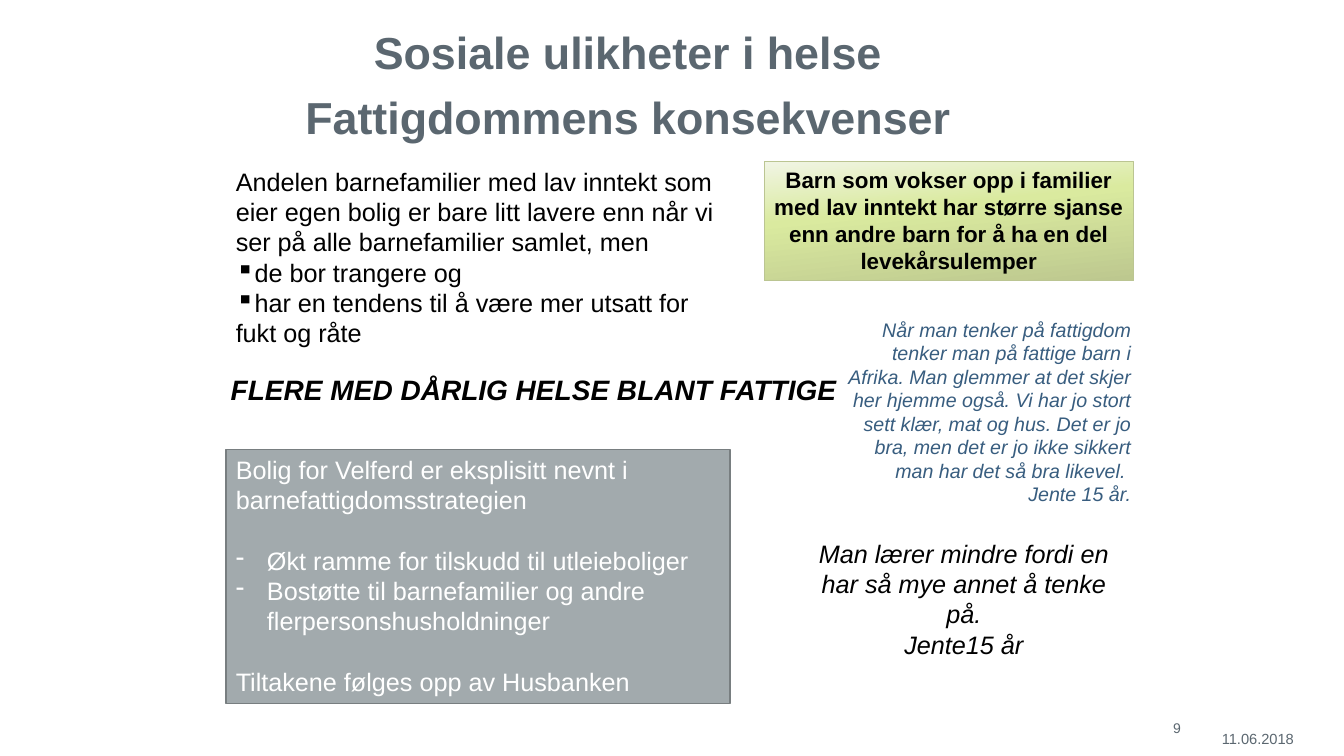
import copy
import pptx
import pptx.util
import pptx.dml.color
import pptx.enum.shapes
import pptx.enum.text
import pptx.oxml
import pptx.oxml.ns

PX = 9144
ALIGN = pptx.enum.text.PP_ALIGN
ANCHOR = pptx.enum.text.MSO_ANCHOR


def color(value):
    return pptx.dml.color.RGBColor.from_string(value)


def px(*lengths):
    return [pptx.util.Emu(length * PX) for length in lengths]


def add_bullet(paragraph, mark, indent):
    properties = paragraph._p.get_or_add_pPr()
    properties.set("marL", str(indent * PX))
    properties.set("indent", str(-indent * PX))
    bullet = pptx.oxml.parse_xml(
        f'<a:buChar {pptx.oxml.ns.nsdecls("a")} char="{mark}"/>')
    properties.append(bullet)


def write(shape, lines, size=18, ink="000000", bold=False, italic=False,
          align=ALIGN.LEFT, anchor=ANCHOR.TOP, mark=None, bulleted=(),
          indent=0, gaps=None):
    frame = shape.text_frame
    frame.word_wrap = True
    frame.auto_size = pptx.enum.text.MSO_AUTO_SIZE.NONE
    frame.vertical_anchor = anchor
    for index, line in enumerate(lines):
        paragraph = frame.paragraphs[0] if index == 0 else frame.add_paragraph()
        if index in bulleted:
            add_bullet(paragraph, mark, indent)
        paragraph.alignment = align
        if gaps and index in gaps:
            paragraph.space_before = pptx.util.Pt(gaps[index])
        run = paragraph.add_run()
        run.text = line
        run.font.name = "Arial"
        run.font.size = pptx.util.Pt(size)
        run.font.bold = bold
        run.font.italic = italic
        run.font.color.rgb = color(ink)


def add_text(slide, box, lines, **form):
    write(slide.shapes.add_textbox(*px(*box)), lines, **form)


def add_panel(slide, box, border, width, lines, **form):
    panel = slide.shapes.add_shape(
        pptx.enum.shapes.MSO_SHAPE.RECTANGLE, *px(*box))
    panel.shadow.inherit = False
    panel.line.color.rgb = color(border)
    panel.line.width = pptx.util.Pt(width)
    write(panel, lines, **form)
    return panel


def fill_gradient(shape, stops, angle):
    shape.fill.gradient()
    shape.fill.gradient_angle = angle
    first = shape.fill.gradient_stops[0]._gs
    first.addnext(copy.deepcopy(first))
    for stop, (position, tone) in zip(shape.fill.gradient_stops, stops):
        stop.position = position
        stop.color.rgb = color(tone)


def add_title(slide, box, lines, **form):
    title = slide.shapes.title
    title.left, title.top, title.width, title.height = px(*box)
    frame = title.text_frame
    frame.margin_left, frame.margin_top, frame.margin_right, frame.margin_bottom = px(0, 4, 8, 5)
    write(title, lines, **form)


def main():
    presentation = pptx.Presentation()
    presentation.slide_width, presentation.slide_height = px(1333, 750)
    slide = presentation.slides.add_slide(presentation.slide_layouts[5])

    add_title(slide, (177, 34, 900, 100),
              ["Sosiale ulikheter i helse", "Fattigdommens konsekvenser"],
              size=32, ink="5B6770", bold=True, align=ALIGN.CENTER,
              anchor=ANCHOR.MIDDLE, gaps={1: 8})
    add_text(slide, (1032, 706, 149, 33), ["9"], size=10, ink="5B6770",
             align=ALIGN.RIGHT, anchor=ANCHOR.MIDDLE)
    add_text(slide, (1202, 721, 137, 24), ["11.06.2018"], size=10.5,
             ink="5B6770", anchor=ANCHOR.MIDDLE)

    add_text(slide, (801, 529, 310, 135),
             ["Man lærer mindre fordi en har så mye annet å tenke på.",
              "Jente15 år"], italic=True, align=ALIGN.CENTER)
    hardship = add_panel(
        slide, (758, 160, 366, 118), "BBC592", 0.75,
        ["Barn som vokser opp i familier med lav inntekt har større sjanse "
         "enn andre barn for å ha en del levekårsulemper"],
        size=16, bold=True, align=ALIGN.CENTER)
    fill_gradient(hardship, [(0, "F1F5E5"), (0.4, "DAEA9F"), (1, "BDC88F")], 276)

    add_text(slide, (224, 160, 500, 192),
             ["Andelen barnefamilier med lav inntekt som eier egen bolig er "
              "bare litt lavere enn når vi ser på alle barnefamilier samlet, men",
              "de bor trangere og",
              "har en tendens til å være mer utsatt for fukt og råte"],
             mark="▪", bulleted=(1, 2))
    add_text(slide, (816, 310, 316, 199),
             ["Når man tenker på fattigdom tenker man på fattige barn i Afrika. "
              "Man glemmer at det skjer her hjemme også. Vi har jo stort sett "
              "klær, mat og hus. Det er jo bra, men det er jo ikke sikkert man "
              "har det så bra likevel. ", "Jente 15 år."],
             size=14, ink="385D7F", italic=True, align=ALIGN.RIGHT)

    measures = add_panel(
        slide, (224, 446, 500, 252), "787E80", 1.25,
        ["Bolig for Velferd er eksplisitt nevnt i barnefattigdomsstrategien",
         "Økt ramme for tilskudd til utleieboliger",
         "Bostøtte til barnefamilier og andre flerpersonshusholdninger",
         "Tiltakene følges opp av Husbanken"],
        ink="FFFFFF", mark="-", bulleted=(1, 2), indent=31,
        gaps={1: 21.5, 3: 21.5})
    measures.fill.solid()
    measures.fill.fore_color.rgb = color("A2AAAD")

    add_text(slide, (219, 365, 775, 89),
             ["FLERE MED DÅRLIG HELSE BLANT FATTIGE"],
             size=20, bold=True, italic=True)
    presentation.save("out.pptx")


if __name__ == "__main__":
    main()
